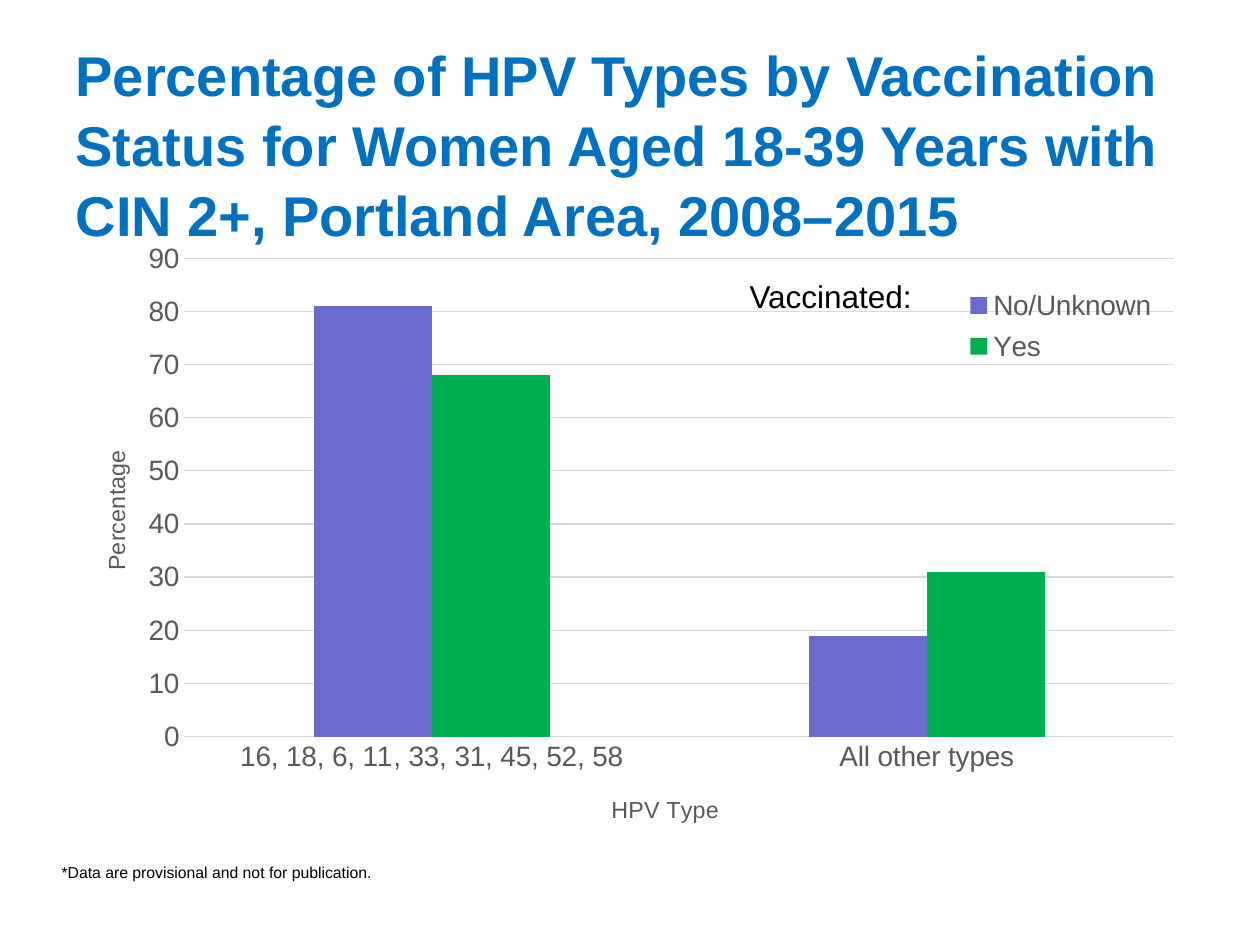
from dataclasses import dataclass

from lxml.etree import SubElement
from pptx import Presentation
from pptx.chart.data import CategoryChartData
from pptx.dml.color import RGBColor
from pptx.enum.chart import XL_CHART_TYPE as ChartType
from pptx.enum.chart import XL_LEGEND_POSITION as LegendPos
from pptx.enum.chart import XL_TICK_MARK as TickMark
from pptx.enum.text import MSO_ANCHOR, MSO_AUTO_SIZE, PP_ALIGN
from pptx.oxml.ns import qn
from pptx.util import Inches, Pt


@dataclass(frozen=True)
class Theme:
    font: str = "Arial"
    title: str = "0070C0"
    text: str = "000000"
    label: str = "595959"
    grid: str = "D9D9D9"
    unvaccinated: str = "6B6BCF"
    vaccinated: str = "00B050"
    title_size: float = 32
    key_size: float = 18
    label_size: float = 16
    axis_title_size: float = 13.3
    note_size: float = 9


THEME = Theme()


def style_font(font, size, color, bold=False):
    """Apply the theme typeface with a size, colour and weight."""
    font.name = THEME.font
    font.size = Pt(size)
    font.bold = bold
    font.color.rgb = RGBColor.from_string(color)


def set_layout(element, index, inner=False, **fractions):
    """Place a chart part by fractions of the chart area."""
    for old in element.findall(qn("c:layout")):
        element.remove(old)
    layout = SubElement(element, qn("c:layout"))
    manual = SubElement(layout, qn("c:manualLayout"))
    if inner:
        SubElement(manual, qn("c:layoutTarget")).set("val", "inner")
    for key in ("x", "y"):
        SubElement(manual, qn(f"c:{key}Mode")).set("val", "edge")
    for key, value in fractions.items():
        SubElement(manual, qn(f"c:{key}")).set("val", str(value))
    element.insert(index, layout)


def add_title(slide, text):
    """Fill and format the title placeholder."""
    sp = slide.shapes.title
    sp.left, sp.top = Inches(0.5), Inches(0.3)
    sp.width, sp.height = Inches(9.12), Inches(1.67)
    tf = sp.text_frame
    tf.text = text
    tf.auto_size = MSO_AUTO_SIZE.NONE
    tf.vertical_anchor = MSO_ANCHOR.MIDDLE
    p = tf.paragraphs[0]
    p.alignment = PP_ALIGN.LEFT
    p.line_spacing = 1.04
    style_font(p.runs[0].font, THEME.title_size, THEME.title, bold=True)


def add_text(slide, text, left, top, width, height, size):
    """Add a one-line text box."""
    box = slide.shapes.add_textbox(
        Inches(left), Inches(top), Inches(width), Inches(height))
    tf = box.text_frame
    tf.word_wrap = True
    tf.text = text
    style_font(tf.paragraphs[0].runs[0].font, size, THEME.text)


def format_axis(axis, title, x, y):
    """Format the labels, ticks and title of an axis."""
    axis.major_tick_mark = axis.minor_tick_mark = TickMark.NONE
    style_font(axis.tick_labels.font, THEME.label_size, THEME.label)
    tf = axis.axis_title.text_frame
    tf.text = title
    style_font(tf.paragraphs[0].runs[0].font, THEME.axis_title_size, THEME.label)
    set_layout(axis.axis_title._element, 1, x=x, y=y)


def format_line(line):
    """Give a chart line the thin grid style."""
    line.color.rgb = RGBColor.from_string(THEME.grid)
    line.width = Pt(0.75)


def format_legend(chart):
    """Overlay the legend on the upper right of the plot."""
    chart.has_legend = True
    legend = chart.legend
    legend.position = LegendPos.CORNER
    legend.include_in_layout = True
    style_font(legend.font, THEME.label_size, THEME.label)
    set_layout(legend._element, 1, x=0.78, y=0.08, w=0.2, h=0.15)


def add_column_chart(slide):
    """Add the clustered columns of HPV types by vaccination status."""
    data = CategoryChartData(number_format="0")
    data.categories = ["16, 18, 6, 11, 33, 31, 45, 52, 58", "All other types"]
    data.add_series("No/Unknown", (81, 19))
    data.add_series("Yes", (68, 31))
    chart = slide.shapes.add_chart(
        ChartType.COLUMN_CLUSTERED, Inches(0.5), Inches(1.83),
        Inches(9), Inches(4.88), data).chart
    chart.has_title = False
    style_font(chart.font, 10, THEME.text)

    plot = chart.plots[0]
    plot.vary_by_categories = False
    plot.gap_width, plot.overlap = 219, 0
    for series, color in zip(plot.series, (THEME.unvaccinated, THEME.vaccinated)):
        series.format.fill.solid()
        series.format.fill.fore_color.rgb = RGBColor.from_string(color)

    format_axis(chart.category_axis, "HPV Type", 0.48, 0.91)
    format_line(chart.category_axis.format.line)
    value_axis = chart.value_axis
    format_axis(value_axis, "Percentage", 0.03, 0.35)
    value_axis.minimum_scale, value_axis.maximum_scale = 0, 90
    value_axis.major_unit = 10
    value_axis.tick_labels.number_format = "0"
    value_axis.tick_labels.number_format_is_linked = False
    value_axis.format.line.fill.background()
    format_line(value_axis.major_gridlines.format.line)

    format_legend(chart)
    plot_area = chart._chartSpace.chart.plotArea
    set_layout(plot_area, 0, inner=True, x=0.107, y=0.045, w=0.873, h=0.778)


def main():
    """Build and save the slide."""
    prs = Presentation()
    prs.slide_width, prs.slide_height = Inches(10), Inches(7.5)
    slide = prs.slides.add_slide(prs.slide_layouts[5])
    add_title(slide, "Percentage of HPV Types by Vaccination Status for Women "
                     "Aged 18-39 Years with CIN 2+, Portland Area, 2008–2015")
    add_column_chart(slide)
    add_text(slide, "Vaccinated:", 5.85, 2.15, 1.51, 0.4, THEME.key_size)
    add_text(slide, "*Data are provisional and not for publication.",
             0.39, 6.8, 6.58, 0.25, THEME.note_size)
    prs.save("out.pptx")


if __name__ == "__main__":
    main()
